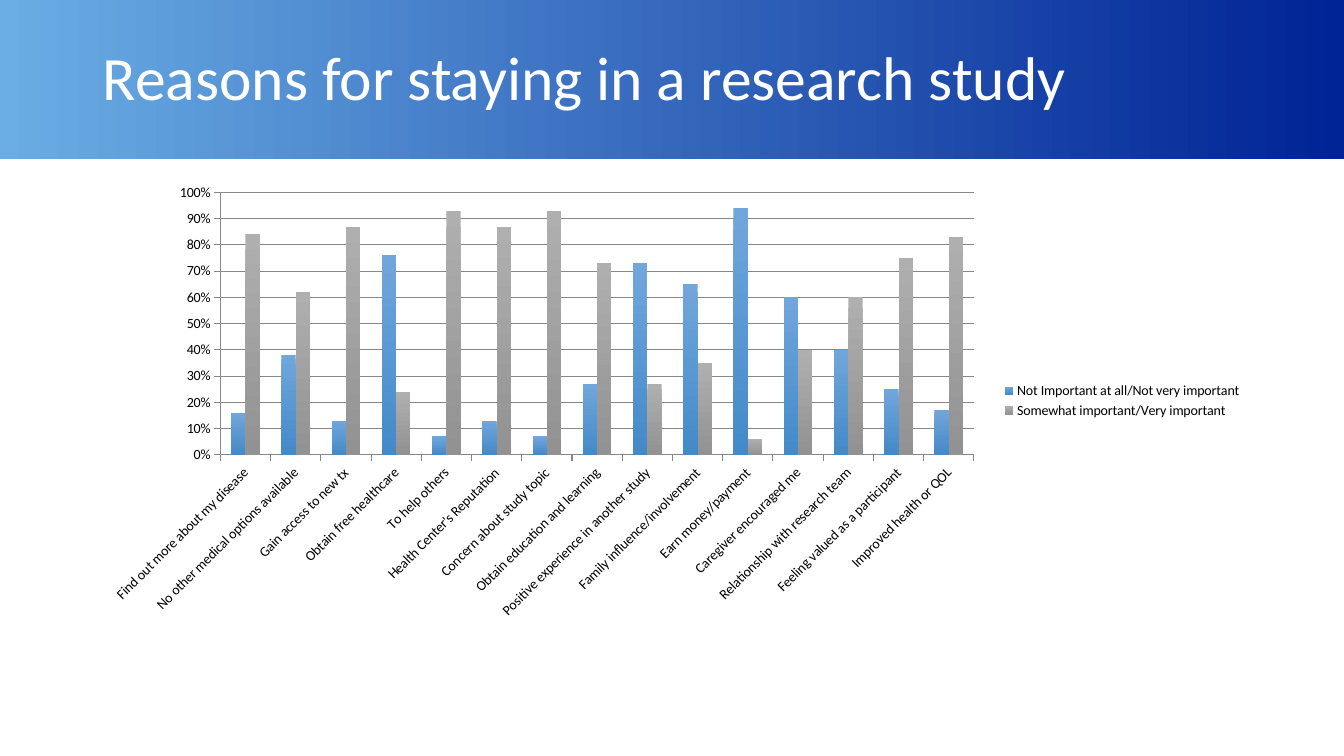
from lxml import etree
from pptx import Presentation
from pptx.chart.data import CategoryChartData
from pptx.dml.color import RGBColor
from pptx.enum.chart import XL_CHART_TYPE, XL_LEGEND_POSITION, XL_TICK_MARK
from pptx.enum.shapes import MSO_SHAPE
from pptx.enum.text import MSO_ANCHOR, PP_ALIGN
from pptx.oxml.ns import qn
from pptx.util import Inches, Pt

COLUMN = XL_CHART_TYPE.COLUMN_CLUSTERED
RIGHT = XL_LEGEND_POSITION.RIGHT
OUT = XL_TICK_MARK.OUTSIDE
RECT = MSO_SHAPE.RECTANGLE
MIDDLE = MSO_ANCHOR.MIDDLE
LEFT = PP_ALIGN.LEFT
FONT = "Calibri"
COLORS = {
    "sky": "6AADE4", "navy": "002395", "white": "FFFFFF", "black": "000000",
    "grid": "878787", "blue top": "71A6DB", "blue base": "438AC9",
    "gray top": "AFAFAF", "gray base": "929292",
}


def write(frame, text, size=12, color="black", space=1.0):
    frame.word_wrap = True
    frame.vertical_anchor = MIDDLE
    para = frame.paragraphs[0]
    para.alignment = LEFT
    para.line_spacing = space
    run = para.add_run()
    run.text = text
    run.font.name = FONT
    run.font.size = Pt(size)
    run.font.color.rgb = RGBColor.from_string(COLORS[color])


def shade(fill, first, last, angle):
    fill.gradient()
    fill.gradient_angle = angle
    for stop, name, place in zip(fill.gradient_stops, (first, last), (0, 1)):
        stop.color.rgb = RGBColor.from_string(COLORS[name])
        stop.position = place


deck = Presentation()
deck.slide_width = Inches(13.33)
deck.slide_height = Inches(7.5)
slide = deck.slides.add_slide(deck.slide_layouts[5])

band = slide.shapes.add_shape(RECT, 0, 0, deck.slide_width, Inches(1.58))
band.shadow.inherit = False
band.line.fill.background()
shade(band.fill, "sky", "navy", 0)

title = slide.shapes.title
title.left, title.top = Inches(0.92), Inches(0.07)
title.width, title.height = Inches(11.5), Inches(1.45)
write(title.text_frame, "Reasons for staying in a research study",
      size=44, color="white", space=0.9)
title._element.addprevious(band._element)

rows = [
    ("Find out more about my disease", 0.16, 0.84),
    ("No other medical options available", 0.38, 0.62),
    ("Gain access to new tx", 0.13, 0.87),
    ("Obtain free healthcare", 0.76, 0.24),
    ("To help others", 0.07, 0.93),
    ("Health Center's Reputation", 0.13, 0.87),
    ("Concern about study topic", 0.07, 0.93),
    ("Obtain education and learning", 0.27, 0.73),
    ("Positive experience in another study", 0.73, 0.27),
    ("Family influence/involvement", 0.65, 0.35),
    ("Earn money/payment", 0.94, 0.06),
    ("Caregiver encouraged me", 0.6, 0.4),
    ("Relationship with research team", 0.4, 0.6),
    ("Feeling valued as a participant", 0.25, 0.75),
    ("Improved health or QOL", 0.17, 0.83),
]
names, low, high = zip(*rows)
data = CategoryChartData(number_format="0%")
data.categories = names
data.add_series("Not Important at all/Not very important", low)
data.add_series("Somewhat important/Very important", high)
chart = slide.shapes.add_chart(
    COLUMN, Inches(0.92), Inches(1.73), Inches(11.5), Inches(4.49), data).chart
chart.has_title = False
chart.font.name = FONT
chart.font.size = Pt(10)
chart.font.color.rgb = RGBColor.from_string(COLORS["black"])
chart.has_legend = True
chart.legend.position = RIGHT
chart.legend.include_in_layout = False

plot = chart.plots[0]
plot.gap_width = 150
plot.overlap = 0
plot.vary_by_categories = False
for series, tone in zip(plot.series, ("blue", "gray")):
    shade(series.format.fill, tone + " top", tone + " base", 270)
    series.invert_if_negative = False

reason, share = chart.category_axis, chart.value_axis
share.minimum_scale, share.maximum_scale = 0, 1
share.major_unit = 0.1
share.has_major_gridlines = True
share.tick_labels.number_format = "0%"
share.tick_labels.number_format_is_linked = False
for axis in (reason, share):
    axis.major_tick_mark = OUT
    axis.tick_labels.font.size = Pt(10)
for line in (reason.format.line, share.format.line,
             share.major_gridlines.format.line):
    line.color.rgb = RGBColor.from_string(COLORS["grid"])
    line.width = Pt(0.75)
reason._element.find(qn("c:txPr")).find(qn("a:bodyPr")).set("rot", "-2700000")

area = chart._chartSpace.chart.plotArea
for old in area.findall(qn("c:layout")):
    area.remove(old)
layout = etree.Element(qn("c:layout"))
manual = etree.SubElement(layout, qn("c:manualLayout"))
for tag, value in (("layoutTarget", "inner"), ("xMode", "edge"),
                   ("yMode", "edge"), ("x", "0.11"), ("y", "0.04"),
                   ("w", "0.65"), ("h", "0.58")):
    etree.SubElement(manual, qn("c:" + tag)).set("val", value)
area.insert(0, layout)

deck.save("out.pptx")
